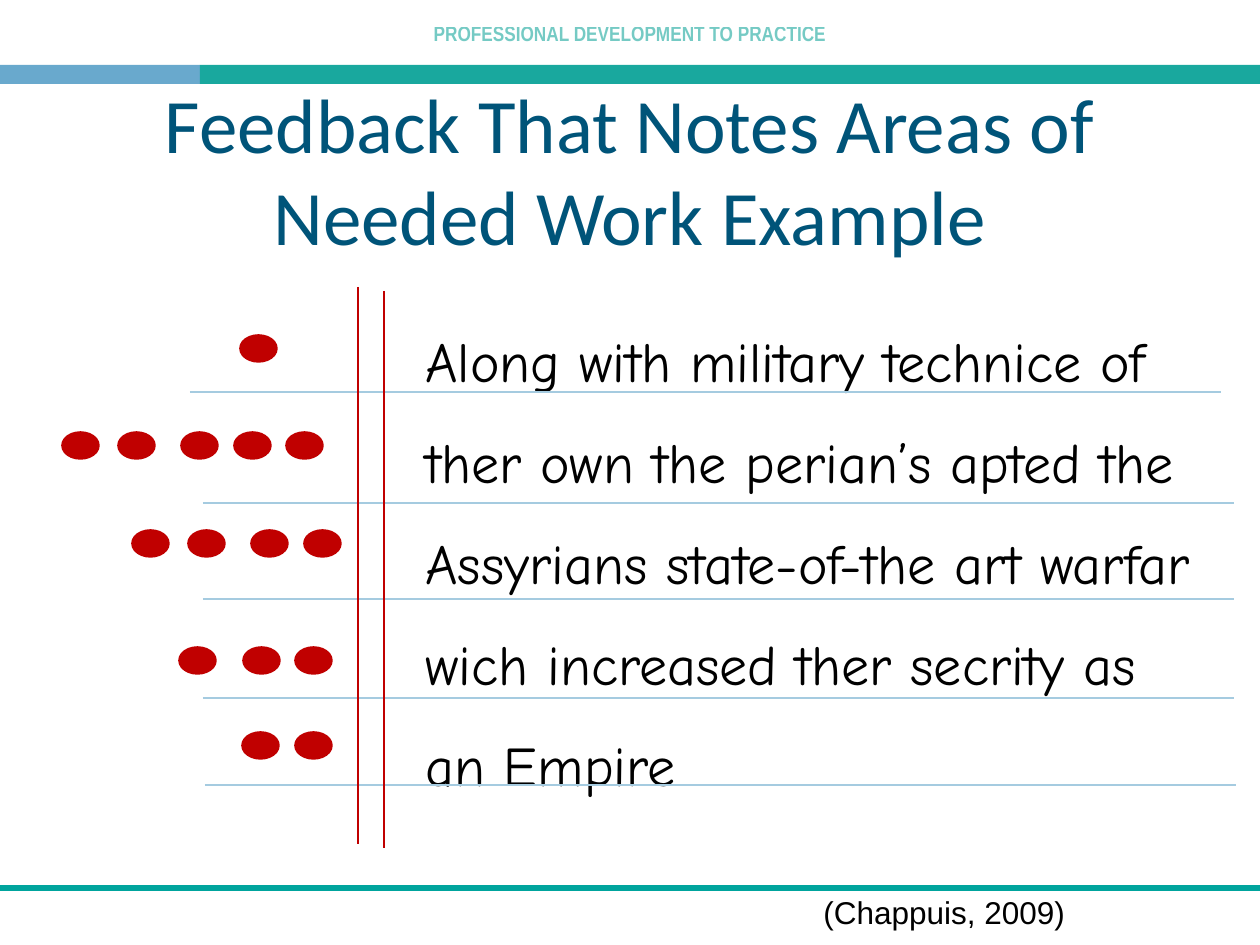
from pptx import Presentation
from pptx.dml.color import RGBColor
from pptx.enum.shapes import MSO_CONNECTOR as CONN, MSO_SHAPE as SHAPE
from pptx.enum.text import MSO_ANCHOR, MSO_AUTO_SIZE, PP_ALIGN
from pptx.oxml.ns import qn
from pptx.util import Emu, Pt
from lxml.etree import SubElement


def px(*values):
    return [Emu(round(v * 914400 / 126)) for v in values]


def rgb(color):
    return RGBColor.from_string(color)


prs = Presentation()
prs.slide_width, prs.slide_height = px(1260, 945)
s = prs.slides.add_slide(prs.slide_layouts[5])

# Header text, slightly transparent
sp = s.shapes.add_textbox(*px(0, 16, 1260, 50))
tf = sp.text_frame
tf.word_wrap = True
tf.margin_left, tf.margin_top, tf.margin_right, tf.margin_bottom = px(9, 5, 9, 5)
p = tf.paragraphs[0]
p.alignment = PP_ALIGN.CENTER
r = p.add_run()
r.text = "PROFESSIONAL DEVELOPMENT TO PRACTICE"
r.font.name, r.font.size, r.font.bold = "Arial Narrow", Pt(12), True
r.font.color.rgb = rgb("19A89E")
SubElement(r.font.fill._xPr.find(".//" + qn("a:srgbClr")), qn("a:alpha"), val="60000")

# Header bands
for x, w, color in [(0, 200, "69A9CD"), (200, 1060, "19A89E")]:
    sp = s.shapes.add_shape(SHAPE.RECTANGLE, *px(x, 65, w, 19))
    sp.shadow.inherit = False
    sp.fill.solid()
    sp.fill.fore_color.rgb = rgb(color)
    sp.line.fill.background()

# Title
sp = s.shapes.title
sp.left, sp.top, sp.width, sp.height = px(63, 93, 1134, 151)
tf = sp.text_frame
tf.text = "Feedback That Notes Areas of Needed Work Example"
tf.auto_size = MSO_AUTO_SIZE.NONE
tf.vertical_anchor = MSO_ANCHOR.MIDDLE
p = tf.paragraphs[0]
p.alignment = PP_ALIGN.CENTER
p.font.name, p.font.size = "Calibri", Pt(44)
p.font.color.rgb = rgb("005479")

# Student writing
sample = [
    "Along with military technice of",
    "ther own the perian’s apted the",
    "Assyrians state-of-the art warfar",
    "wich increased ther secrity as",
    "an Empire",
]
sp = s.shapes.add_textbox(*px(161, 287, 1164, 513))
tf = sp.text_frame
tf.word_wrap = True
for i, text in enumerate(sample):
    p = tf.add_paragraph() if i else tf.paragraphs[0]
    p.text = text
    p.level = 4
    p.line_spacing = 1.5
    pPr = p._p.get_or_add_pPr()
    pPr.set("marL", "1828800")
    pPr.set("indent", "0")
    p.font.name, p.font.size = "Comic Neue", Pt(32)
    p.font.color.rgb = rgb("000000")

# Footer rule, paper rules and margin lines: x1, y1, x2, y2, colour, points
rules = [(190, 392), (203, 503), (203, 599), (203, 698), (205, 785)]
lines = [(0, 888, 1260, 888, "00A49D", 3)]
lines += [(x, y, x + 1031, y, "A5CBE0", 0.75) for x, y in rules]
lines += [(x, y, x, y + 557, "C00000", 0.75) for x, y in [(384, 291), (358, 287)]]
for x1, y1, x2, y2, color, weight in lines:
    c = s.shapes.add_connector(CONN.STRAIGHT, *px(x1, y1, x2, y2))
    c.line.color.rgb = rgb(color)
    c.line.width = Pt(weight)
    SubElement(c._element.spPr, qn("a:effectLst"))

# Error dots beside each line of writing
dots = [
    (336, [241]),
    (433, [63, 119, 182, 235, 287]),
    (531, [133, 189, 252, 305]),
    (648, [180, 244, 296]),
    (733, [243, 296]),
]
for y, xs in dots:
    for x in xs:
        sp = s.shapes.add_shape(SHAPE.OVAL, *px(x, y, 35, 25))
        sp.shadow.inherit = False
        sp.fill.solid()
        sp.fill.fore_color.rgb = rgb("C00000")
        sp.line.color.rgb = rgb("C00000")
        sp.line.width = Pt(2)

# Citation
sp = s.shapes.add_textbox(*px(811, 887, 282, 50))
tf = sp.text_frame
tf.word_wrap = True
p = tf.paragraphs[0]
p.text = "(Chappuis, 2009)"
p.font.name, p.font.size = "Arial", Pt(18)
p.font.color.rgb = rgb("000000")

prs.save("out.pptx")
